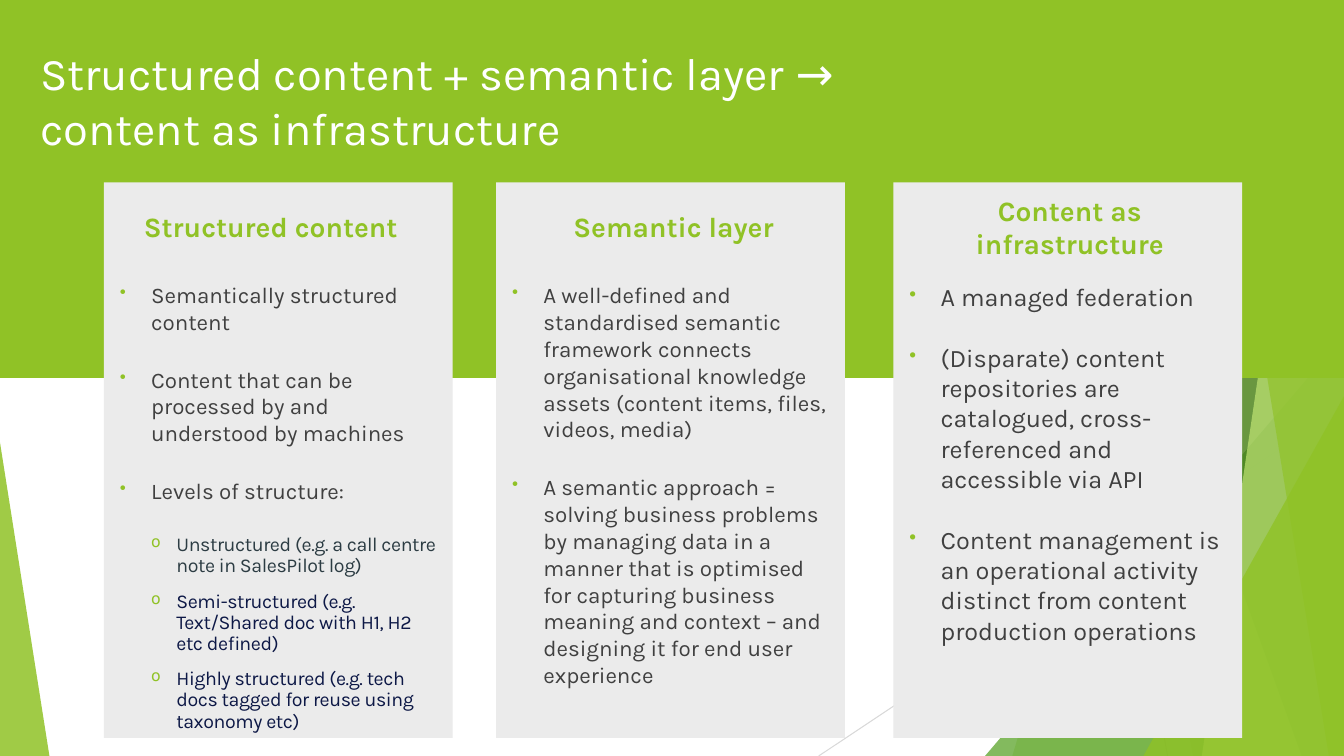
from lxml.etree import SubElement
from pptx import Presentation
from pptx.dml.color import RGBColor
from pptx.enum.shapes import MSO_CONNECTOR, MSO_SHAPE
from pptx.enum.text import MSO_ANCHOR, PP_ALIGN
from pptx.oxml.ns import qn
from pptx.util import Inches, Pt

GREEN = RGBColor(0x90, 0xC2, 0x26)
MID_GREEN = RGBColor(0x54, 0xA0, 0x21)
DARK_GREEN = RGBColor(0x3F, 0x78, 0x19)
PALE_GREEN = RGBColor(0xC0, 0xE4, 0x74)
CARD_GREY = RGBColor(0xEB, 0xEB, 0xEB)
LINE_GREY = RGBColor(0xBF, 0xBF, 0xBF)
LIGHT_LINE = RGBColor(0xD9, 0xD9, 0xD9)
TEXT_GREY = RGBColor(0x40, 0x40, 0x40)
SLATE = RGBColor(0x2C, 0x3C, 0x43)
NAVY = RGBColor(0x0D, 0x18, 0x46)
WHITE = RGBColor(0xFF, 0xFF, 0xFF)

FONT = "Karla"
WIDTH, HEIGHT = 13.33, 7.5
CARD_TOP, CARD_WIDTH, CARD_HEIGHT = 1.81, 3.46, 5.51

POINT = {"marL": 0.31, "indent": -0.31, "bullet": "•", "format": {"space_before": Pt(10), "space_after": Pt(12)}}
SUBPOINT = {"marL": 0.56, "indent": -0.25, "bullet": "o",
            "format": {"level": 1, "space_before": Pt(10), "space_after": Pt(0), "line_spacing": 0.9}}

# Each column: card left, heading left and width, heading, point size, points, subpoints
COLUMNS = [
    (1.03, 1.2, 2.91, "Structured content", 16,
     ["Semantically structured content",
      "Content that can be processed by and understood by machines",
      "Levels of structure:"],
     [("Unstructured (e.g. a call centre note in SalesPilot log)", SLATE),
      ("Semi-structured (e.g. Text/Shared doc with H1, H2 etc defined)", NAVY),
      ("Highly structured (e.g. tech docs tagged for reuse using taxonomy etc)", NAVY)]),
    (4.92, 5.25, 2.8, "Semantic layer", 16,
     ["A well-defined and standardised semantic framework connects organisational "
      "knowledge assets (content items, files, videos, media)",
      "A semantic approach = solving business problems by managing data in a manner "
      "that is optimised for capturing business meaning and context – and designing "
      "it for end user experience"],
     []),
    (8.86, 8.85, 3.46, "Content as infrastructure", 18,
     ["A managed federation",
      "(Disparate) content repositories are catalogued, cross-referenced and accessible via API",
      "Content management is an operational activity distinct from content production operations"],
     []),
]


def set_attributes(target, values):
    for name, value in values.items():
        setattr(target, name, value)


def paint(sp, color, opacity=100):
    sp.shadow.inherit = False
    sp.fill.solid()
    sp.fill.fore_color.rgb = color
    sp.line.fill.background()
    if opacity < 100:
        clr = sp.fill._xPr.find(qn("a:solidFill"))[0]
        SubElement(clr, qn("a:alpha"), val=str(opacity * 1000))


def add_rule(s, start, end, color):
    line = s.shapes.add_connector(MSO_CONNECTOR.STRAIGHT, *map(Inches, start + end))
    line.line.color.rgb = color
    line.line.width = Pt(0.75)
    SubElement(line._element.spPr, qn("a:effectLst"))


def add_shard(s, top_x, bottom_x, color, opacity):
    """Full-height facet running from a slanted left side to the right slide edge."""
    corners = [(WIDTH, 0), (WIDTH, HEIGHT), (bottom_x, HEIGHT)]
    builder = s.shapes.build_freeform(Inches(top_x), 0)
    builder.add_line_segments([(Inches(x), Inches(y)) for x, y in corners], close=True)
    paint(builder.convert_to_shape(), color, opacity)


def add_triangle(s, left, top, width, apex, color, opacity):
    """Triangle standing on the bottom slide edge; apex is 0 at left, 1 at right."""
    sp = s.shapes.add_shape(MSO_SHAPE.ISOSCELES_TRIANGLE, *map(Inches, (left, top, width, HEIGHT - top)))
    sp.adjustments[0] = apex
    paint(sp, color, opacity)


def add_rectangle(s, left, top, width, height, color):
    sp = s.shapes.add_shape(MSO_SHAPE.RECTANGLE, *map(Inches, (left, top, width, height)))
    paint(sp, color)
    return sp


def add_run(p, text, size, color, bold=False):
    r = p.add_run()
    r.text = text
    set_attributes(r.font, {"name": FONT, "size": Pt(size), "bold": bold})
    r.font.color.rgb = color
    return r


def add_bullet(tf, first, style, text, size, color):
    p = tf.paragraphs[0] if first else tf.add_paragraph()
    set_attributes(p, {"alignment": PP_ALIGN.LEFT} | style["format"])
    if first:
        p.space_before = Pt(0)
    pPr = p._p.get_or_add_pPr()
    for side in ("marL", "indent"):
        pPr.set(side, str(Inches(style[side])))
    SubElement(SubElement(pPr, qn("a:buClr")), qn("a:srgbClr"), val=str(GREEN))
    SubElement(pPr, qn("a:buSzPct"), val="80000")
    SubElement(pPr, qn("a:buChar"), char=style["bullet"])
    return add_run(p, text, size, color)


def add_card(s, left, size, points, subpoints):
    tf = add_rectangle(s, left, CARD_TOP, CARD_WIDTH, CARD_HEIGHT, CARD_GREY).text_frame
    set_attributes(tf, {"word_wrap": True, "vertical_anchor": MSO_ANCHOR.TOP,
                        "margin_left": Inches(0.16), "margin_top": Inches(0.98),
                        "margin_right": Inches(0.16), "margin_bottom": Inches(0.16)})
    for i, text in enumerate(points):
        add_bullet(tf, i == 0, POINT, text, size, TEXT_GREY)
    for text, color in subpoints:
        r = add_bullet(tf, False, SUBPOINT, text, 14, color)
        r.font._element.set("spc", "-30")


def add_text_box(s, left, top, width, height, **frame_format):
    tf = s.shapes.add_textbox(*map(Inches, (left, top, width, height))).text_frame
    set_attributes(tf, {"word_wrap": True} | frame_format)
    return tf.paragraphs[0]


def add_heading(s, left, width, text):
    p = add_text_box(s, left, CARD_TOP, width, 0.88,
                     vertical_anchor=MSO_ANCHOR.MIDDLE, margin_left=Inches(0.16))
    p.alignment = PP_ALIGN.CENTER
    add_run(p, text, 20, GREEN, bold=True)


def add_title(s, first_line, second_line):
    p = add_text_box(s, 0.3, 0.4, 14.6, 0.86)
    add_run(p, first_line, 32.4, WHITE)
    p.add_line_break()
    add_run(p, second_line, 32.4, WHITE)


def add_backdrop(s):
    add_rule(s, (10.25, 0), (11.58, HEIGHT), LINE_GREY)
    add_rule(s, (WIDTH, 4.03), (8.12, HEIGHT), LIGHT_LINE)
    add_shard(s, 12.28, 10.04, GREEN, 30)
    add_shard(s, 10.5, 11.83, GREEN, 20)
    add_triangle(s, 9.77, 3.33, 3.56, 1, MID_GREEN, 72)
    add_shard(s, 10.21, 12.91, DARK_GREEN, 70)
    add_shard(s, 13.03, 11.92, PALE_GREEN, 70)
    add_shard(s, 11.96, 13.18, GREEN, 65)
    add_triangle(s, 11.34, 3.93, 1.99, 1, GREEN, 80)
    add_triangle(s, 0, 4.39, 0.49, 0, GREEN, 85)
    add_rectangle(s, 0, 0, WIDTH, HEIGHT / 2, GREEN)


def main():
    prs = Presentation()
    set_attributes(prs, {"slide_width": Inches(WIDTH), "slide_height": Inches(HEIGHT)})
    s = prs.slides.add_slide(prs.slide_layouts[6])
    add_backdrop(s)
    for card_left, _, _, _, size, points, subpoints in COLUMNS:
        add_card(s, card_left, size, points, subpoints)
    add_title(s, "Structured content + semantic layer →", "content as infrastructure")
    for _, heading_left, heading_width, heading, *_ in COLUMNS:
        add_heading(s, heading_left, heading_width, heading)
    prs.save("out.pptx")


if __name__ == "__main__":
    main()
